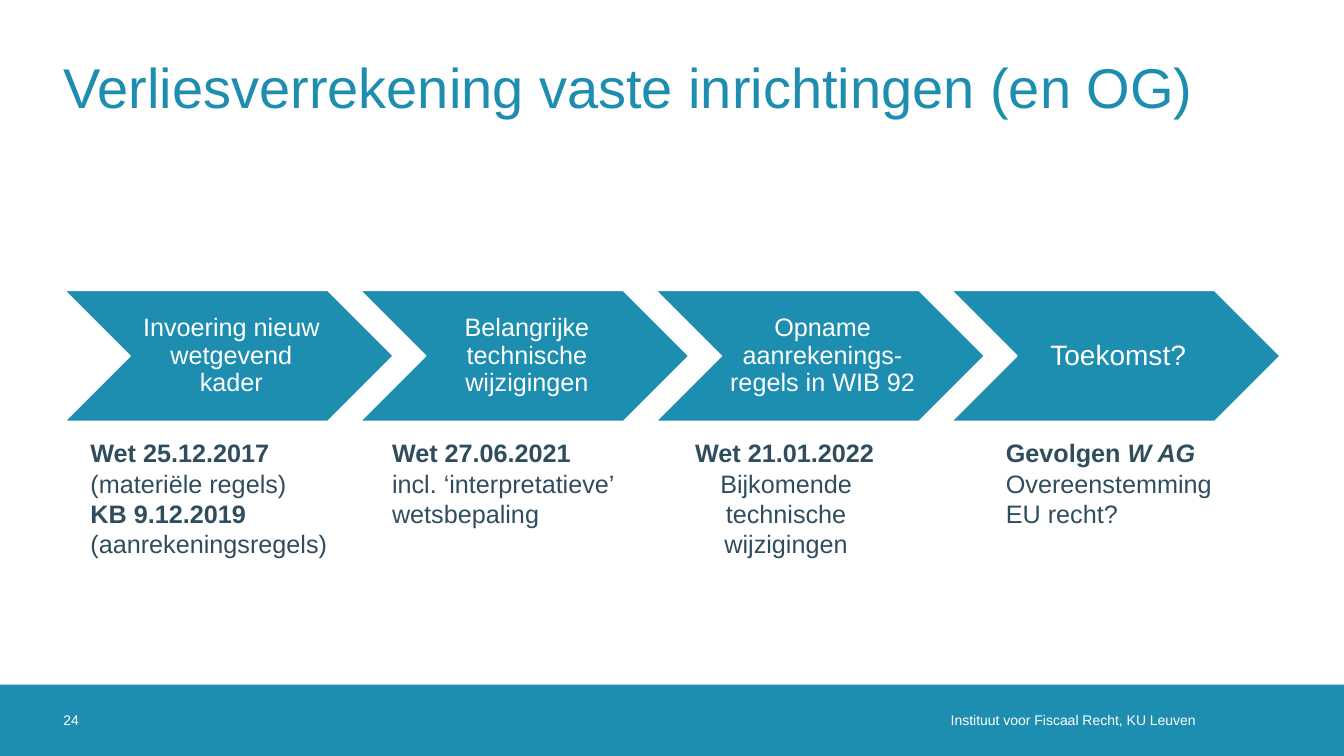
from pptx import Presentation
from pptx.dml.color import RGBColor
from pptx.enum.shapes import MSO_SHAPE
from pptx.enum.text import MSO_ANCHOR, PP_ALIGN
from pptx.util import Cm, Pt

BLUE = RGBColor(0x1D, 0x8D, 0xB0)
SLATE = RGBColor(0x2F, 0x4D, 0x5D)
WHITE = RGBColor(0xFF, 0xFF, 0xFF)

WIDTH, HEIGHT = 33.87, 19.05
BAR_TOP, BAR_HIGH = 17.25, 1.8
LEFT, STEP = 1.63, 7.45
STEP_TOP, STEP_WIDE, STEP_HIGH = 7.32, 8.28, 3.3
LABEL_GAP, LABEL_WIDE = 1.65, 4.98
NOTE_TOP = 10.9

BOLD = {"bold": True}
BOLD_SLANT = {"bold": True, "italic": True}
CENTER = {"alignment": PP_ALIGN.CENTER}
RIGHT = {"alignment": PP_ALIGN.RIGHT}
TIGHT = {"alignment": PP_ALIGN.CENTER, "line_spacing": 0.9}

# Chevron label lines and text size
STEPS = [
    (["Invoering nieuw wetgevend kader"], 18),
    (["Belangrijke technische wijzigingen"], 18),
    (["Opname aanrekenings-", "regels in WIB 92"], 18),
    (["Toekomst?"], 20),
]

# Left, width, height, then paragraphs as (runs, paragraph format)
NOTES = [
    (2.03, 6.76, 3.33, [
        ([("Wet 25.12.2017", BOLD)], {}),
        ([("(materiële regels)", {})], {}),
        ([("KB 9.12.2019", BOLD)], {}),
        ([("(aanrekeningsregels)", {})], {}),
    ]),
    (9.63, 6.58, 2.57, [
        ([("Wet 27.06.2021", BOLD)], {}),
        ([("incl. ‘interpretatieve’ wetsbepaling", {})], {}),
    ]),
    (17.27, 5.08, 3.33, [
        ([("Wet 21.01.2022", BOLD)], {}),
        ([("Bijkomende technische wijzigingen", {})], CENTER),
    ]),
    (25.1, 6.12, 2.57, [
        ([("Gevolgen ", BOLD), ("W AG", BOLD_SLANT)], {}),
        ([("Overeenstemming EU recht?", {})], {}),
    ]),
]


def apply(target, values):
    for name, value in values.items():
        setattr(target, name, value)


class Page:
    def __init__(self, slide, font="Arial"):
        self.shapes = slide.shapes
        self.font = font

    def block(self, kind, box, edge=None):
        """Draw a blue preset shape, outlined only if an edge colour is given."""
        shape = self.shapes.add_shape(kind, *map(Cm, box))
        shape.shadow.inherit = False
        shape.fill.solid()
        shape.fill.fore_color.rgb = BLUE
        if edge is None:
            shape.line.fill.background()
        else:
            shape.line.color.rgb = edge
            shape.line.width = Pt(1)

    def text(self, box, paras, size, color, pad=(0, 0, 0, 0), anchor=MSO_ANCHOR.MIDDLE):
        """Add wrapped text; pad is left, top, right, bottom."""
        frame = self.shapes.add_textbox(*map(Cm, box)).text_frame
        sides = ("margin_left", "margin_top", "margin_right", "margin_bottom")
        apply(frame, dict(zip(sides, map(Cm, pad))))
        apply(frame, {"word_wrap": True, "vertical_anchor": anchor})
        for index, (runs, form) in enumerate(paras):
            para = frame.add_paragraph() if index else frame.paragraphs[0]
            apply(para, form)
            for words, look in runs:
                if words == "\n":
                    para.add_line_break()
                    continue
                run = para.add_run()
                run.text = words
                apply(run.font, {"name": self.font, "size": Pt(size), **look})
                run.font.color.rgb = color

    def line(self, box, words, size, color, form=None, **more):
        """Add a single plain paragraph."""
        self.text(box, [([(words, {})], form or {})], size, color, **more)

    def step(self, left, lines, size):
        """Draw one chevron with its label."""
        self.block(MSO_SHAPE.CHEVRON, (left, STEP_TOP, STEP_WIDE, STEP_HIGH), WHITE)
        runs = [(words, {}) for words in "\n|".join(lines).replace("\n", "|\n").split("|")]
        box = (left + LABEL_GAP, STEP_TOP, LABEL_WIDE, STEP_HIGH)
        self.text(box, [(runs, TIGHT)], size, WHITE, pad=(0.2, 0.08, 0.08, 0.08))


def main():
    deck = Presentation()
    deck.slide_width, deck.slide_height = Cm(WIDTH), Cm(HEIGHT)
    page = Page(deck.slides.add_slide(deck.slide_layouts[6]))

    page.block(MSO_SHAPE.RECTANGLE, (0, BAR_TOP, WIDTH, BAR_HIGH))
    for index, (lines, size) in enumerate(STEPS):
        page.step(LEFT + index * STEP, lines, size)

    page.line((16.76, BAR_TOP, 13.87, BAR_HIGH), "Instituut voor Fiscaal Recht, KU Leuven",
              10, WHITE, RIGHT, pad=(0, 0, 0.5, 0))
    page.line((1.6, BAR_TOP, 1.8, BAR_HIGH), "24", 10, WHITE)
    page.line((1.6, 0.58, 30.66, 3.2), "Verliesverrekening vaste inrichtingen (en OG)", 40, BLUE)

    for left, wide, high, paras in NOTES:
        page.text((left, NOTE_TOP, wide, high), paras, 18, SLATE,
                  pad=(0.25, 0.13, 0.25, 0.13), anchor=MSO_ANCHOR.TOP)

    deck.save("out.pptx")


if __name__ == "__main__":
    main()
